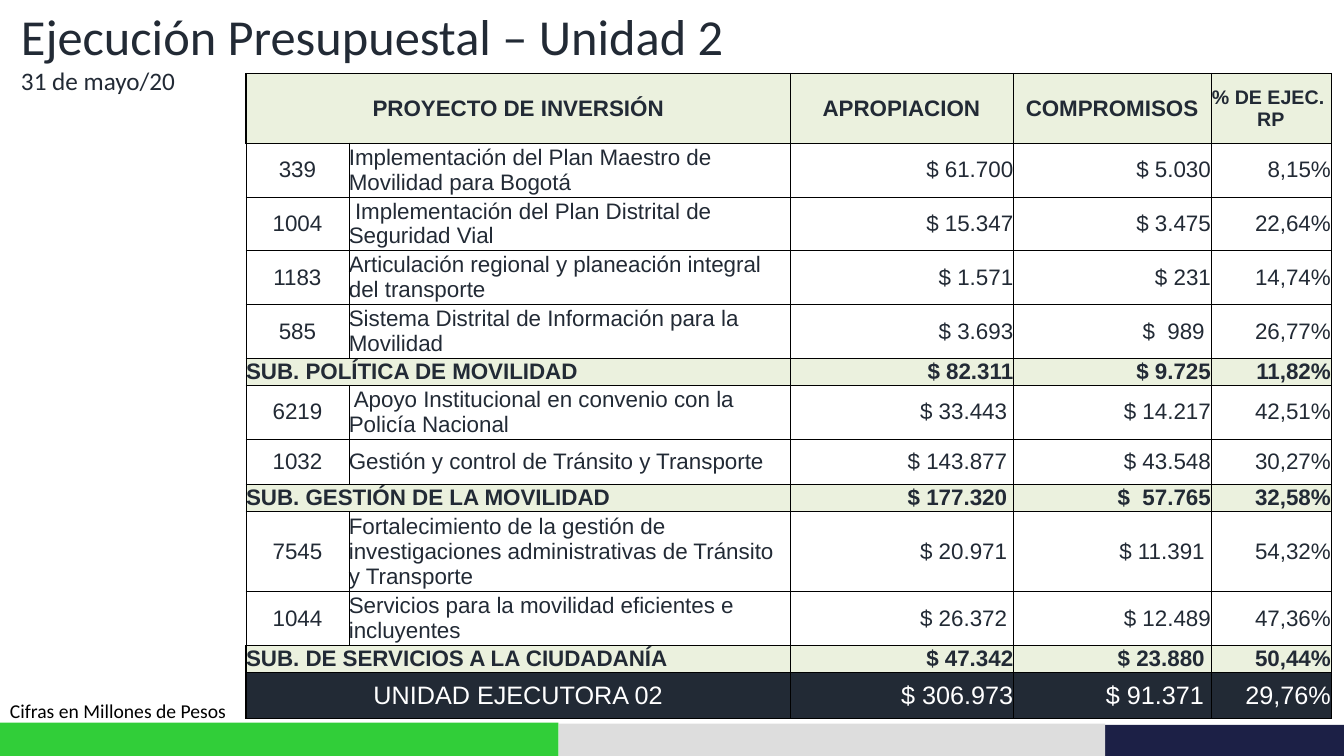
from lxml.etree import SubElement
from pptx import Presentation
from pptx.dml.color import RGBColor
from pptx.enum.shapes import MSO_SHAPE
from pptx.enum.text import MSO_ANCHOR, MSO_AUTO_SIZE, PP_ALIGN
from pptx.oxml.ns import qn
from pptx.util import Inches, Pt

INK = RGBColor(0x22, 0x2A, 0x35)
BLACK = RGBColor(0, 0, 0)
WHITE = RGBColor(0xFF, 0xFF, 0xFF)
PALE = RGBColor(0xEB, 0xF1, 0xDE)
NAVY = RGBColor(0x1C, 0x20, 0x46)
GREY = RGBColor(0xDD, 0xDD, 0xDD)
GREEN = RGBColor(0x31, 0xCE, 0x39)

# left, top, width, height, colour
BANDS = [
    (10.96, 7.19, 5.22, 0.31, NAVY),
    (5.54, 7.18, 5.42, 0.32, GREY),
    (-3.82, 7.17, 9.36, 0.33, GREEN),
]
TITLE = [("Ejecución Presupuestal – Unidad 2", 36), ("31 de mayo/20", 18)]
FOOTNOTE = [("Cifras en Millones de Pesos", 14)]

COL_WIDTHS = [1.02, 4.38, 2.21, 1.96, 1.19]
# kind, row height, texts; a row with four texts merges its first two columns
ROWS = [
    ("header", 0.69, ("PROYECTO DE INVERSIÓN", " APROPIACION ", "COMPROMISOS", "% DE EJEC. \nRP")),
    ("project", 0.45, ("339", "Implementación del Plan Maestro de Movilidad para Bogotá",
                       "$ 61.700", "$ 5.030", "8,15%")),
    ("project", 0.45, ("1004", " Implementación del Plan Distrital de Seguridad Vial",
                       "$ 15.347", "$ 3.475", "22,64%")),
    ("project", 0.45, ("1183", "Articulación regional y planeación integral del transporte",
                       "$ 1.571", "$ 231", "14,74%")),
    ("project", 0.45, ("585", "Sistema Distrital de Información para la Movilidad",
                       "$ 3.693", "$  989 ", "26,77%")),
    ("subtotal", 0.23, ("SUB. POLÍTICA DE MOVILIDAD", "$ 82.311", "$ 9.725", "11,82%")),
    ("project", 0.45, ("6219", " Apoyo Institucional en convenio con la Policía Nacional",
                       "$ 33.443 ", "$ 14.217", "42,51%")),
    ("project", 0.45, ("1032", "Gestión y control de Tránsito y Transporte",
                       "$ 143.877 ", "$ 43.548", "30,27%")),
    ("subtotal", 0.23, ("SUB. GESTIÓN DE LA MOVILIDAD", "$ 177.320 ", "$  57.765", "32,58%")),
    ("project", 0.68, ("7545", "Fortalecimiento de la gestión de investigaciones "
                       "administrativas de Tránsito y Transporte",
                       "$ 20.971 ", "$ 11.391 ", "54,32%")),
    ("project", 0.45, ("1044", "Servicios para la movilidad eficientes e incluyentes",
                       "$ 26.372 ", "$ 12.489", "47,36%")),
    ("subtotal", 0.23, ("SUB. DE SERVICIOS A LA CIUDADANÍA", "$ 47.342", "$ 23.880 ", "50,44%")),
    ("total", 0.46, ("UNIDAD EJECUTORA 02", " $ 306.973", "$ 91.371 ", "29,76%")),
]
# fill, text colour, size, bold, alignment of the first column
STYLES = {
    "header": (PALE, INK, 16, True, PP_ALIGN.CENTER),
    "project": (WHITE, INK, 16, False, PP_ALIGN.CENTER),
    "subtotal": (PALE, INK, 16, True, PP_ALIGN.LEFT),
    "total": (INK, WHITE, 18, False, PP_ALIGN.CENTER),
}


def add_run(p, text, size, color, font, bold=False):
    r = p.add_run()
    r.text = text
    r.font.name = font
    r.font.size = Pt(size)
    r.font.bold = bold
    r.font.color.rgb = color


def add_text(s, left, top, width, height, lines, color):
    tf = s.shapes.add_textbox(Inches(left), Inches(top), Inches(width), Inches(height)).text_frame
    tf.word_wrap = True
    tf.auto_size = MSO_AUTO_SIZE.SHAPE_TO_FIT_TEXT
    for i, (text, size) in enumerate(lines):
        p = tf.add_paragraph() if i else tf.paragraphs[0]
        add_run(p, text, size, color, "Calibri")


def set_borders(cell, widths):
    """Draw the left, right, top and bottom borders at the given point widths."""
    tcPr = cell._tc.get_or_add_tcPr()
    for side, width in zip("LRTB", widths):
        ln = SubElement(tcPr, qn(f"a:ln{side}"), w=str(Pt(width)))
        fill = SubElement(ln, qn("a:solidFill"))
        SubElement(fill, qn("a:srgbClr"), val=str(BLACK))


def border_widths(row, col):
    """Heavier lines frame the header and the left of the last two rows."""
    header = row == 0
    left = 1 if header and col < 4 or row >= len(ROWS) - 2 and col == 0 else 0.5
    right = 1 if header and col < 3 else 0.5
    return left, right, 1 if row <= 1 else 0.5, 1 if header else 0.5


def alignment(kind, col):
    if col == 0:
        return STYLES[kind][4]
    if kind == "header":
        return PP_ALIGN.CENTER
    return PP_ALIGN.LEFT if col == 1 else PP_ALIGN.RIGHT


def fill_cell(cell, kind, col, text):
    fill, color, size, bold, _ = STYLES[kind]
    cell.fill.solid()
    cell.fill.fore_color.rgb = fill
    cell.vertical_anchor = MSO_ANCHOR.MIDDLE
    cell.margin_left = cell.margin_right = cell.margin_top = cell.margin_bottom = 0
    if not text:
        return
    if kind == "header" and col == 4:
        size = 14
    p = cell.text_frame.paragraphs[0]
    p.alignment = alignment(kind, col)
    for i, line in enumerate(text.split("\n")):
        if i:
            p.add_line_break()
        add_run(p, line, size, color, "Arial", bold)


def add_budget_table(s):
    table = s.shapes.add_table(len(ROWS), len(COL_WIDTHS), Inches(2.44), Inches(0.73),
                               Inches(sum(COL_WIDTHS)), Inches(sum(r[1] for r in ROWS))).table
    table.first_row = table.horz_banding = False
    for column, width in zip(table.columns, COL_WIDTHS):
        column.width = Inches(width)
    for row, (kind, height, texts) in enumerate(ROWS):
        table.rows[row].height = Inches(height)
        if len(texts) < len(COL_WIDTHS):
            table.cell(row, 0).merge(table.cell(row, 1))
            texts = (texts[0], "", *texts[1:])
        for col, text in enumerate(texts):
            cell = table.cell(row, col)
            set_borders(cell, border_widths(row, col))
            fill_cell(cell, kind, col, text)


def main():
    prs = Presentation()
    prs.slide_width, prs.slide_height = Inches(13.33), Inches(7.5)
    s = prs.slides.add_slide(prs.slide_layouts[6])
    for left, top, width, height, color in BANDS:
        sp = s.shapes.add_shape(MSO_SHAPE.RECTANGLE, Inches(left), Inches(top),
                                Inches(width), Inches(height))
        sp.shadow.inherit = False
        sp.fill.solid()
        sp.fill.fore_color.rgb = color
        sp.line.fill.background()
    add_text(s, 0.11, 0, 10.28, 1.01, TITLE, INK)
    add_budget_table(s)
    add_text(s, 0, 6.88, 3.16, 0.34, FOOTNOTE, BLACK)
    prs.save("out.pptx")


if __name__ == "__main__":
    main()
